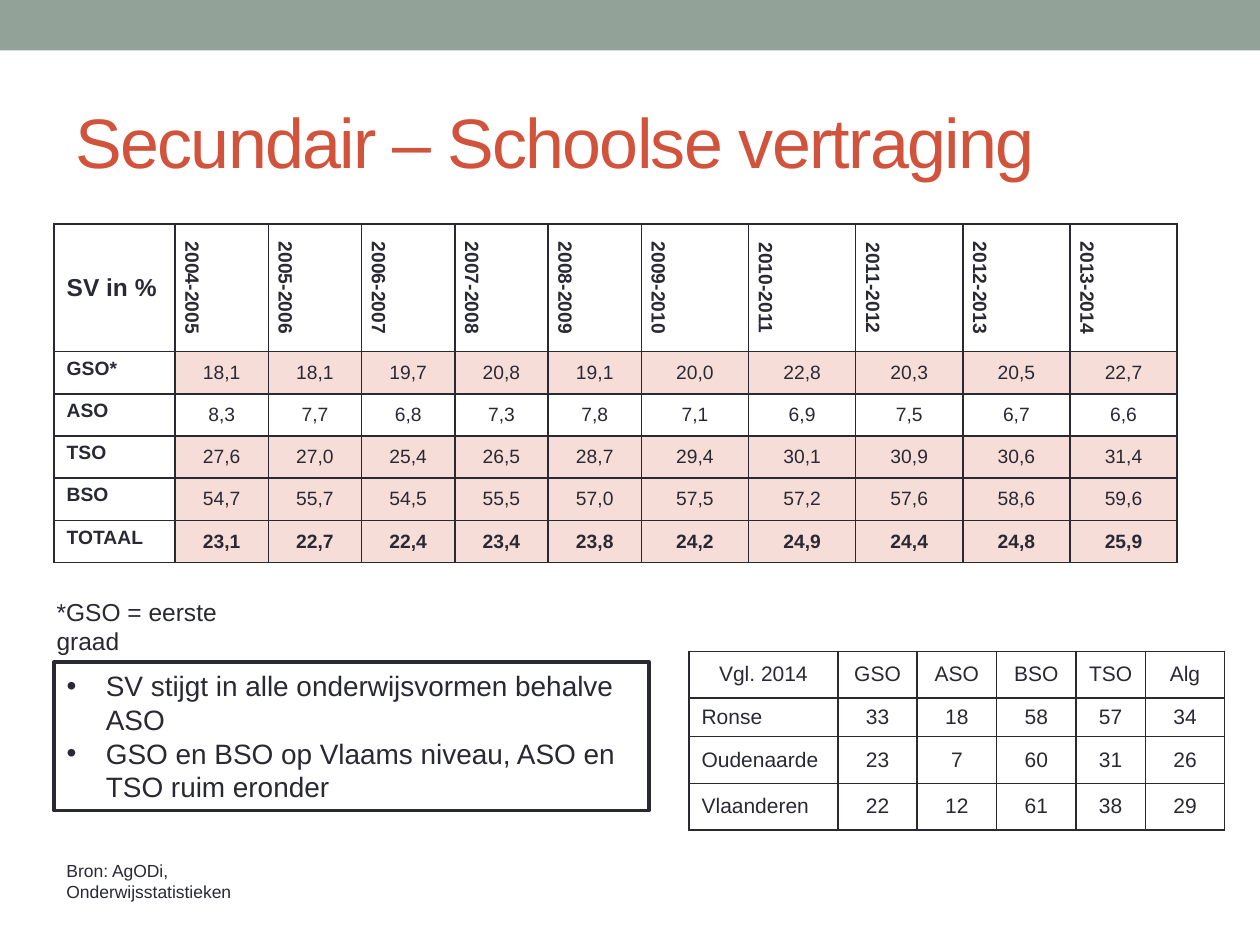
from dataclasses import dataclass

from lxml.etree import SubElement
from pptx import Presentation
from pptx.dml.color import RGBColor
from pptx.enum.shapes import MSO_SHAPE as Shape
from pptx.enum.text import MSO_ANCHOR as Anchor, MSO_AUTO_SIZE as Fit, PP_ALIGN as Align
from pptx.oxml.ns import qn
from pptx.util import Cm, Pt

INK, RED, PINK, SAGE, WHITE = "292934", "D2533C", "F6DDD8", "93A299", "FFFFFF"


@dataclass
class Grid:
    left: float
    top: float
    cols: list[float]
    rows: list[float]
    data: list[list[str]]


@dataclass
class Note:
    text: str
    box: tuple[float, float, float, float]
    size: int


def paint(target, color: str) -> None:
    """Give a fill a solid colour."""
    target.solid()
    target.fore_color.rgb = RGBColor.from_string(color)


def write(frame, text: str, *, size: float, color: str = INK, bold: bool = False,
          align=Align.LEFT, space: int = 0) -> None:
    """Write one paragraph per line of text."""
    frame.text = text
    for para in frame.paragraphs:
        para.alignment = align
        para.space_before = Pt(0)
        for run in para.runs:
            font = run.font
            font.name, font.size, font.bold = "Arial", Pt(size), bold
            paint(font.fill, color)
            if space:
                run._r.get_or_add_rPr().set("spc", str(space))


def place(shape, box: tuple[float, float, float, float]) -> None:
    shape.left, shape.top, shape.width, shape.height = map(Cm, box)


def border(cell) -> None:
    props = cell._tc.get_or_add_tcPr()
    for side in ("lnL", "lnR", "lnT", "lnB"):
        line = SubElement(props, qn(f"a:{side}"), w=str(Pt(1)))
        fill = SubElement(line, qn("a:solidFill"))
        SubElement(fill, qn("a:srgbClr"), val=INK)


def add_grid(slide, grid: Grid):
    """Draw an empty bordered table and return it."""
    frame = slide.shapes.add_table(len(grid.rows), len(grid.cols), Cm(grid.left), Cm(grid.top),
                                   Cm(sum(grid.cols)), Cm(sum(grid.rows)))
    table = frame.table
    table.first_row = table.horz_banding = False
    for col, width in zip(table.columns, grid.cols):
        col.width = Cm(width)
    for row, height in zip(table.rows, grid.rows):
        row.height = Cm(height)
    for cell in table.iter_cells():
        border(cell)
        paint(cell.fill, WHITE)
        cell.vertical_anchor = Anchor.MIDDLE
    return table


def add_delay(slide, grid: Grid) -> None:
    """Delay per school form: upright years on top, shaded rows below."""
    table = add_grid(slide, grid)
    for r, row in enumerate(grid.data):
        for c, text in enumerate(row):
            cell = table.cell(r, c)
            bold = r == 0 or c == 0 or row[0] == "TOTAAL"
            write(cell.text_frame, text, size=14 if r == c == 0 else 11, bold=bold,
                  align=Align.CENTER if c else Align.LEFT)
            if r and c and row[0] != "ASO":
                paint(cell.fill, PINK)
            if r and not c:
                cell.vertical_anchor = Anchor.TOP
            if c and not r:
                cell._tc.get_or_add_tcPr().set("vert", "vert")


def add_towns(slide, grid: Grid) -> None:
    table = add_grid(slide, grid)
    for r, row in enumerate(grid.data):
        for c, text in enumerate(row):
            write(table.cell(r, c).text_frame, text, size=12,
                  align=Align.LEFT if r and not c else Align.CENTER)


def add_note(slide, note: Note) -> None:
    frame = slide.shapes.add_textbox(*map(Cm, note.box)).text_frame
    frame.word_wrap = True
    write(frame, note.text, size=note.size)


def add_list(body, text: str) -> None:
    """Turn the body placeholder into a framed bullet list."""
    place(body, (1.09, 13.34, 11.99, 3))
    paint(body.fill, WHITE)
    paint(body.line.fill, INK)
    body.line.width = Pt(2)
    frame = body.text_frame
    frame.auto_size = Fit.NONE
    frame.vertical_anchor = Anchor.MIDDLE
    write(frame, text, size=16)
    for para in frame.paragraphs:
        props = para._p.get_or_add_pPr()
        props.set("marL", str(Cm(0.79)))
        props.set("indent", str(Cm(-0.79)))
        SubElement(props, qn("a:buFont"), typeface="Arial")
        SubElement(props, qn("a:buChar"), char="•")


YEARS = [f"{year}-{year + 1}" for year in range(2004, 2014)]
DELAY = Grid(1.09, 4.52, [2.44] + [1.88] * 5 + [2.16] * 5, [2.57] + [0.85] * 5, [
    ["SV in %", *YEARS],
    ["GSO*", *"18,1 18,1 19,7 20,8 19,1 20,0 22,8 20,3 20,5 22,7".split()],
    ["ASO", *"8,3 7,7 6,8 7,3 7,8 7,1 6,9 7,5 6,7 6,6".split()],
    ["TSO", *"27,6 27,0 25,4 26,5 28,7 29,4 30,1 30,9 30,6 31,4".split()],
    ["BSO", *"54,7 55,7 54,5 55,5 57,0 57,5 57,2 57,6 58,6 59,6".split()],
    ["TOTAAL", *"23,1 22,7 22,4 23,4 23,8 24,2 24,9 24,4 24,8 25,9".split()],
])
TOWNS = Grid(13.89, 13.13, [3, 1.6, 1.6, 1.6, 1.4, 1.6], [0.94, 0.78, 0.94, 0.94], [
    ["Vgl. 2014", "GSO", "ASO", "BSO", "TSO", "Alg"],
    ["Ronse", "33", "18", "58", "57", "34"],
    ["Oudenaarde", "23", "7", "60", "31", "26"],
    ["Vlaanderen", "22", "12", "61", "38", "29"],
])
NOTES = [
    Note("*GSO = eerste graad", (0.89, 11.91, 4.62, 0.86), 14),
    Note("Bron: AgODi, Onderwijsstatistieken", (1.09, 17.22, 5.59, 1.12), 10),
]
POINTS = ("SV stijgt in alle onderwijsvormen behalve ASO\n"
          "GSO en BSO op Vlaams niveau, ASO en TSO ruim eronder")


def main() -> None:
    deck = Presentation()
    deck.slide_width, deck.slide_height = Cm(25.4), Cm(19.05)
    slide = deck.slides.add_slide(deck.slide_layouts[1])
    title, body = slide.placeholders

    # Top band
    band = slide.shapes.add_shape(Shape.RECTANGLE, 0, 0, deck.slide_width, Cm(1.02))
    band.shadow.inherit = False
    paint(band.fill, SAGE)
    band.line.fill.background()

    # Title
    place(title, (1.27, 1.47, 22.86, 2.74))
    title.text_frame.vertical_anchor = Anchor.MIDDLE
    write(title.text_frame, "Secundair – Schoolse vertraging", size=40, color=RED, space=-100)

    # Tables, findings and notes
    add_delay(slide, DELAY)
    add_list(body, POINTS)
    add_towns(slide, TOWNS)
    for note in NOTES:
        add_note(slide, note)

    deck.save("out.pptx")


if __name__ == "__main__":
    main()
